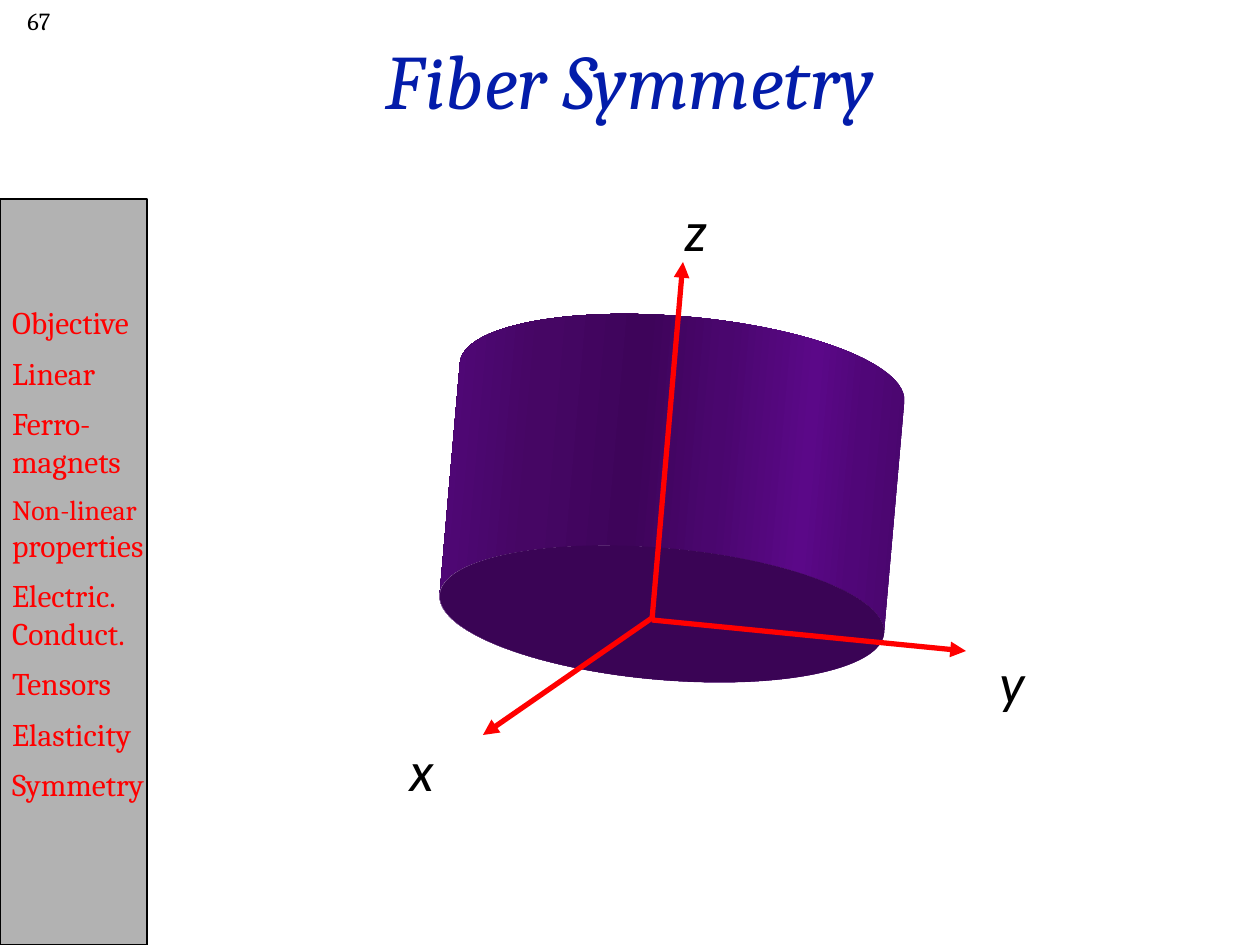
from dataclasses import dataclass

from lxml.etree import SubElement
from pptx import Presentation
from pptx.dml.color import RGBColor
from pptx.enum.shapes import MSO_CONNECTOR as Connector, MSO_SHAPE as Preset
from pptx.enum.text import MSO_ANCHOR as Anchor, PP_ALIGN as Align
from pptx.oxml.ns import qn
from pptx.util import Emu, Pt

EMU_PER_PX = 914400 / 126
COLORS = {
    "title": "031CAA", "ink": "000000", "menu": "FF0000", "panel": "B2B2B2",
    "axis": "FF0000", "base": "3A0455",
}
# Gradient across the upside-down can, from its right side to its left: percent and colour
SIDE_STOPS = [(0, "460668"), (14, "500678"), (24, "5B0888"), (42, "4A066E"),
              (58, "3E045A"), (78, "460664"), (100, "52087C")]
TILT = 5


@dataclass
class Label:
    text: str
    left: int
    top: int
    width: int
    height: int
    size: int
    font: str = "Cambria"
    color: str = "ink"
    italic: bool = False
    align: Align = Align.LEFT
    anchor: Anchor = Anchor.TOP
    wrap: bool = True


@dataclass
class Axis:
    start: tuple[int, int]
    end: tuple[int, int]


@dataclass
class Solid:
    preset: Preset
    center: tuple[int, int]
    width: int
    height: int
    rotation: int


def px(length: float) -> Emu:
    return Emu(round(length * EMU_PER_PX))


def rgb(name: str) -> RGBColor:
    return RGBColor.from_string(COLORS[name])


def style(font, name: str, size: int, color: str, italic: bool = False) -> None:
    font.name, font.size, font.italic = name, Pt(size), italic
    font.color.rgb = rgb(color)


def add_label(page, label: Label) -> None:
    box = page.shapes.add_textbox(px(label.left), px(label.top),
                                  px(label.width), px(label.height))
    frame = box.text_frame
    frame.word_wrap, frame.vertical_anchor = label.wrap, label.anchor
    para = frame.paragraphs[0]
    para.text, para.alignment = label.text, label.align
    style(para.font, label.font, label.size, label.color, label.italic)


def add_menu(page, entries: list[list[tuple[str, int]]]) -> None:
    panel = page.shapes.add_shape(Preset.RECTANGLE, 0, px(199), px(147), px(746))
    panel.shadow.inherit = False
    panel.fill.solid()
    panel.fill.fore_color.rgb = rgb("panel")
    panel.line.color.rgb = rgb("ink")
    panel.line.width = Pt(0.75)
    frame = panel.text_frame
    frame.word_wrap, frame.vertical_anchor = True, Anchor.MIDDLE
    frame.margin_left, frame.margin_right = px(12), 0
    frame.margin_bottom = px(44)
    for index, lines in enumerate(entries):
        para = frame.add_paragraph() if index else frame.paragraphs[0]
        para.alignment, para.space_before = Align.LEFT, Pt(7.2)
        style(para.font, "Cambria", 18, "menu")
        for number, (text, size) in enumerate(lines):
            if number:
                para.add_line_break()
            span = para.add_run()
            span.text = text
            style(span.font, "Cambria", size, "menu")


def add_solid(page, solid: Solid):
    shape = page.shapes.add_shape(
        solid.preset, px(solid.center[0] - solid.width / 2),
        px(solid.center[1] - solid.height / 2), px(solid.width), px(solid.height))
    shape.rotation = solid.rotation
    shape.shadow.inherit = False
    shape.line.fill.background()
    return shape


def add_cylinder(page) -> None:
    side = add_solid(page, Solid(Preset.CAN, (672, 498), 446, 364, 180 + TILT))
    side.adjustments[0] = 0.36
    side.fill.gradient()
    side.fill.gradient_angle = 0
    stops = side.element.spPr.find(qn("a:gradFill")).find(qn("a:gsLst"))
    for stop in list(stops):
        stops.remove(stop)
    for percent, color in SIDE_STOPS:
        stop = SubElement(stops, qn("a:gs"), pos=str(percent * 1000))
        SubElement(stop, qn("a:srgbClr"), val=color)
    base = add_solid(page, Solid(Preset.OVAL, (662, 614), 446, 132, TILT))
    base.fill.solid()
    base.fill.fore_color.rgb = rgb("base")


def add_axis(page, axis: Axis) -> None:
    arrow = page.shapes.add_connector(Connector.STRAIGHT,
                                      *map(px, axis.start + axis.end))
    arrow.line.color.rgb = rgb("axis")
    arrow.line.width = Pt(3)
    outline = arrow.element.spPr.find(qn("a:ln"))
    SubElement(outline, qn("a:tailEnd"), type="triangle")
    SubElement(arrow.element.spPr, qn("a:effectLst"))


def axis_label(text: str, left: int, top: int) -> Label:
    return Label(text, left, top, 55, 81, 32, "Calibri", italic=True, wrap=False)


MENU = [
    [("Objective", 18)],
    [("Linear", 18)],
    [("Ferro-", 18), ("magnets", 18)],
    [("Non-linear", 16), ("properties", 18)],
    [("Electric.", 18), ("Conduct.", 18)],
    [("Tensors", 18)],
    [("Elasticity", 18)],
    [("Symmetry", 18)],
]
HEADINGS = [
    Label("67", 0, 0, 63, 53, 14, align=Align.RIGHT),
    Label("Fiber Symmetry", 0, 0, 1260, 158, 44, color="title", italic=True,
          align=Align.CENTER, anchor=Anchor.MIDDLE),
]
AXES = [
    Axis((652, 620), (683, 262)),
    Axis((652, 620), (966, 651)),
    Axis((652, 618), (483, 735)),
]
AXIS_LABELS = [axis_label("x", 397, 729), axis_label("y", 987, 641),
               axis_label("z", 672, 189)]


def main() -> None:
    deck = Presentation()
    deck.slide_width, deck.slide_height = px(1260), px(945)
    page = deck.slides.add_slide(deck.slide_layouts[6])

    # Side menu, page number and title
    add_menu(page, MENU)
    for heading in HEADINGS:
        add_label(page, heading)

    # Cylinder with its axes
    add_cylinder(page)
    for axis in AXES:
        add_axis(page, axis)
    for label in AXIS_LABELS:
        add_label(page, label)

    deck.save("out.pptx")


if __name__ == "__main__":
    main()
